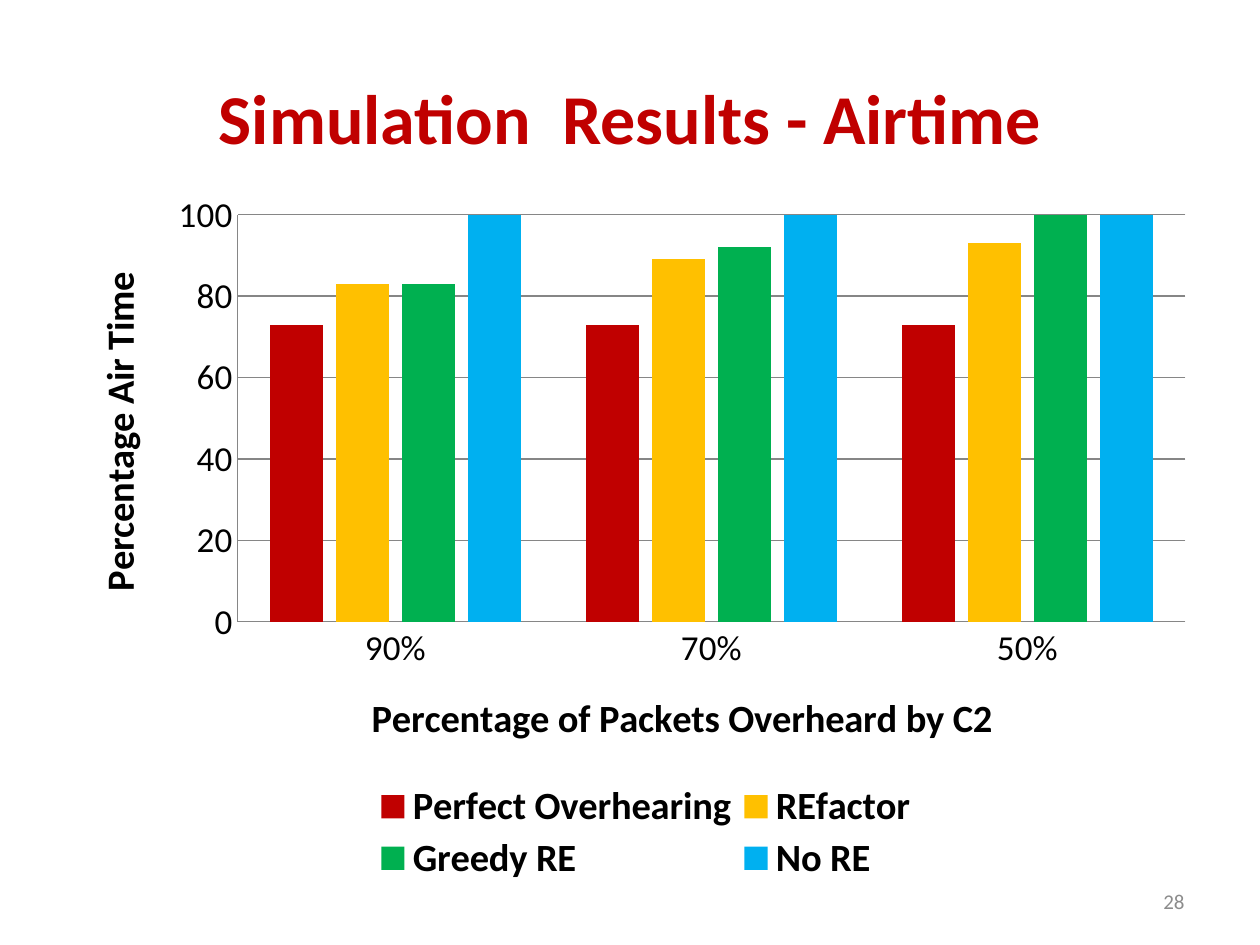
from pptx import Presentation
from pptx.chart.data import CategoryChartData
from pptx.dml.color import RGBColor
from pptx.enum.chart import XL_CHART_TYPE, XL_LEGEND_POSITION, XL_TICK_MARK
from pptx.enum.text import MSO_ANCHOR, PP_ALIGN
from pptx.oxml import parse_xml
from pptx.oxml.ns import nsdecls
from pptx.util import Pt

PX = 9144  # 100 px to the inch
FONT = "Calibri"
BLACK = RGBColor(0x00, 0x00, 0x00)
RED = RGBColor(0xC0, 0x00, 0x00)
AMBER = RGBColor(0xFF, 0xC0, 0x00)
GREEN = RGBColor(0x00, 0xB0, 0x50)
BLUE = RGBColor(0x00, 0xB0, 0xF0)
GRID_GRAY = RGBColor(0x86, 0x86, 0x86)
NUMBER_GRAY = RGBColor(0x8C, 0x8C, 0x8C)

# Content
TITLE = "Simulation  Results - Airtime"
PAGE_NUMBER = "28"
OVERHEARD = ["90%", "70%", "50%"]
AIRTIME = [
    ("Perfect Overhearing", (73, 73, 73), RED),
    ("REfactor", (83, 89, 93), AMBER),
    ("Greedy RE", (83, 92, 100), GREEN),
    ("No RE", (100, 100, 100), BLUE),
]
X_TITLE = "Percentage of Packets Overheard by C2"
Y_TITLE = "Percentage Air Time"

# Positions: px on the page, fractions inside the chart
TITLE_AT = (50, 30, 900, 125)
CHART_AT = (58, 142, 900, 567)
NUMBER_AT = (717, 695, 233, 40)
PLOT_PART = (0.145, 0.05, 0.836, 0.57)
LEGEND_PART = (0.26, 0.84, 0.49, 0.15)


def emu(lengths):
    return [length * PX for length in lengths]


def style(font, size, color, bold=False):
    font.name, font.size, font.bold = FONT, Pt(size), bold
    font.color.rgb = color


def write(shape, text, size, color, align, bold=False):
    frame = shape.text_frame
    frame.word_wrap = True
    frame.vertical_anchor = MSO_ANCHOR.MIDDLE
    para = frame.paragraphs[0]
    para.text, para.alignment = text, align
    style(para.font, size, color, bold)


def layout(part, inner=False):
    target = '<c:layoutTarget val="inner"/>' if inner else ""
    modes = '<c:xMode val="edge"/><c:yMode val="edge"/>'
    sizes = "".join(f'<c:{key} val="{value}"/>' for key, value in zip("xywh", part))
    return parse_xml(f'<c:layout {nsdecls("c")}><c:manualLayout>{target}{modes}{sizes}'
                     "</c:manualLayout></c:layout>")


def format_axis(axis, title):
    axis.has_title = True
    para = axis.axis_title.text_frame.paragraphs[0]
    para.text = title
    style(para.font, 22, BLACK, True)
    style(axis.tick_labels.font, 20, BLACK)
    axis.major_tick_mark = axis.minor_tick_mark = XL_TICK_MARK.NONE
    axis.format.line.color.rgb = GRID_GRAY


deck = Presentation()
deck.slide_width, deck.slide_height = emu((1000, 750))
page = deck.slides.add_slide(deck.slide_layouts[5])

# Title
title = page.shapes.title
title.left, title.top, title.width, title.height = emu(TITLE_AT)
write(title, TITLE, 40, RED, PP_ALIGN.CENTER, True)

# Chart
data = CategoryChartData()
data.categories = OVERHEARD
for name, values, _ in AIRTIME:
    data.add_series(name, values)
chart = page.shapes.add_chart(XL_CHART_TYPE.COLUMN_CLUSTERED, *emu(CHART_AT), data).chart
chart.has_title = False
style(chart.font, 10, BLACK)

plot = chart.plots[0]
plot.gap_width, plot.overlap, plot.vary_by_categories = 125, -25, False
for series, (_, _, color) in zip(plot.series, AIRTIME):
    series.format.fill.solid()
    series.format.fill.fore_color.rgb = color

# Axes
format_axis(chart.category_axis, X_TITLE)
format_axis(chart.value_axis, Y_TITLE)
scale = chart.value_axis
scale.minimum_scale, scale.maximum_scale, scale.major_unit = 0, 100, 20
scale.has_major_gridlines = True
scale.major_gridlines.format.line.color.rgb = GRID_GRAY

# Legend in two rows below the plot
chart.has_legend = True
legend = chart.legend
legend.position = XL_LEGEND_POSITION.BOTTOM
legend.include_in_layout = False
style(legend.font, 22, BLACK, True)

plot_area = chart._chartSpace.chart.plotArea
for old in plot_area.xpath("c:layout"):
    plot_area.remove(old)
plot_area.insert(0, layout(PLOT_PART, inner=True))
legend_position = legend._element.xpath("c:legendPos")[0]
legend_position.addnext(layout(LEGEND_PART))

# Page number
number = page.shapes.add_textbox(*emu(NUMBER_AT))
write(number, PAGE_NUMBER, 12, NUMBER_GRAY, PP_ALIGN.RIGHT)

deck.save("out.pptx")
